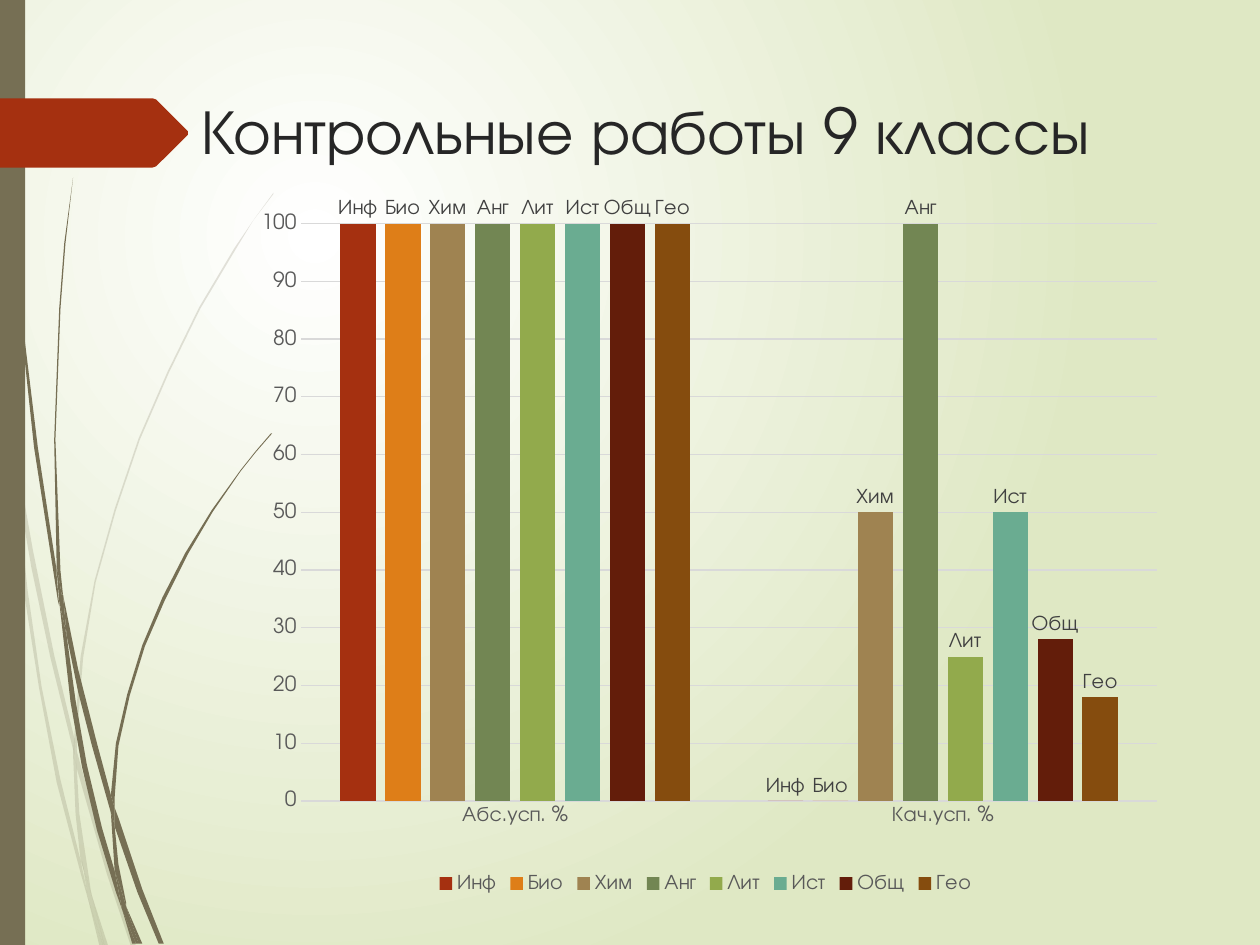
from pptx import Presentation, util as u
from pptx.chart import data as cd
from pptx.dml import color as col
from pptx.enum import chart as ce, shapes, text
from pptx.oxml import ns, parse_xml

PX = 9144
FONT = "TeX Gyre Adventor"
HUES = {"bark": "766F54", "red": "A53010", "white": "FFFFFF", "lime": "DFE8C4",
        "title": "262626", "label": "404040", "axis": "595959", "grid": "D9D9D9"}

PALE = [
    [(8, 350), (6, 322), (0, 282), (0, 299), (7, 344)],
    [(40, 522), (59, 599), (59, 586), (43, 520), (26, 436), (10, 345), (12, 376), (25, 451)],
    [(64, 607), (61, 596), (61, 610), (85, 694), (104, 751), (108, 751), (88, 692)],
    [(83, 751), (86, 751), (73, 711)],
    [(64, 683), (48, 619), (33, 545), (22, 469), (12, 376), (8, 350), (19, 470), (31, 546),
     (45, 621), (64, 693), (70, 714), (69, 707)],
    [(58, 599), (60, 646), (64, 683), (67, 692), (73, 711), (72, 706), (63, 646), (61, 610),
     (61, 608)],
    [(61, 584), (66, 522), (76, 462), (92, 405), (111, 349), (134, 296), (159, 245), (187, 198),
     (201, 175), (217, 154), (217, 153), (201, 175), (186, 197), (158, 244), (133, 295),
     (110, 348), (91, 404), (75, 461), (64, 521), (59, 584), (59, 586), (61, 596)],
    [(70, 714), (79, 751), (82, 751)],
    [(61, 608), (61, 610), (61, 596), (59, 586), (58, 599)],
    [(67, 692), (65, 683), (69, 707), (70, 714), (82, 751), (83, 751), (73, 711)],
]
DARK = [
    [(5, 110), (14, 233), (27, 355), (46, 477), (47, 481), (45, 457), (45, 453), (30, 355),
     (15, 232), (6, 109), (4, 48), (3, 0), (2, 0), (3, 48)],
    [(73, 592), (88, 645), (88, 633), (88, 631), (77, 590), (62, 531), (50, 472), (53, 505),
     (62, 549)],
    [(94, 649), (91, 641), (91, 656), (109, 708), (126, 749), (130, 749), (113, 706)],
    [(91, 691), (81, 657), (69, 607), (60, 556), (53, 505), (47, 477), (56, 557), (65, 608),
     (77, 659), (92, 708), (97, 722), (96, 717)],
    [(50, 472), (48, 453), (44, 349), (48, 245), (52, 193), (58, 141), (51, 193), (47, 245),
     (43, 349), (45, 449), (49, 472)],
    [(110, 749), (113, 749), (100, 719)],
    [(47, 477), (53, 505), (50, 472), (49, 472), (45, 449), (45, 453)],
    [(91, 633), (94, 592), (103, 552), (115, 513), (131, 476), (149, 440), (169, 406), (191, 374),
     (203, 359), (216, 344), (215, 344), (203, 358), (191, 373), (168, 405), (147, 439),
     (129, 474), (113, 512), (101, 551), (92, 590), (88, 631), (91, 641)],
    [(97, 722), (105, 749), (108, 749)],
    [(88, 645), (91, 691), (96, 706), (100, 719), (100, 716), (94, 686), (91, 656), (90, 651)],
    [(88, 645), (90, 651), (91, 656), (91, 641), (88, 631), (88, 633)],
    [(96, 706), (91, 691), (96, 717), (97, 722), (108, 749), (110, 749), (100, 719)],
]
ARROW = [(149, 107), (124, 132), (121, 133), (0, 133), (0, 78), (121, 78), (124, 79), (149, 104)]

CATS = ("Абс.усп. %", "Кач.усп. %")
MARKS = [("Инф", 0, "A53010"), ("Био", 0, "DE7E18"), ("Хим", 50, "9F8351"),
         ("Анг", 100, "728653"), ("Лит", 25, "92AA4C"), ("Ист", 50, "6AAC91"),
         ("Общ", 28, "631D0A"), ("Гео", 18, "854C0E")]


def rgb(hue):
    return col.RGBColor.from_string(HUES.get(hue, hue))


def px(*nums):
    return [u.Emu(n * PX) for n in nums]


def xml(tag, body):
    return parse_xml(f"<{tag} {ns.nsdecls('a', 'c')}>{body}</{tag}>")


class Deck:
    """Holds the style and the current slide."""

    def __init__(self, wide, high):
        self.prs = Presentation()
        self.prs.slide_width, self.prs.slide_height = px(wide, high)
        self.slide = self.prs.slides.add_slide(self.prs.slide_layouts[6])

    def glow(self, inner, outer):
        fill = self.slide.background.fill
        fill.gradient()
        for stop, hue in zip(fill.gradient_stops, (inner, outer)):
            stop.color.rgb = rgb(hue)
        grad = self.slide.element.find(".//" + ns.qn("a:gradFill"))
        lin = grad.find(ns.qn("a:lin"))
        mid = xml("a:path", '<a:fillToRect l="50000" t="50000" r="100000" b="100000"/>')
        mid.set("path", "circle")
        grad.replace(lin, mid)

    def paint(self, shape, hue, alpha=100):
        shape.shadow.inherit = False
        shape.fill.solid()
        shape.fill.fore_color.rgb = rgb(hue)
        shape.line.fill.background()
        if alpha < 100:
            tint = xml("a:alpha", "")
            tint.set("val", str(alpha * 1000))
            shape.element.spPr.find(".//" + ns.qn("a:srgbClr")).append(tint)

    def form(self, points, hue, alpha=100, group=None):
        home = group.shapes if group else self.slide.shapes
        pen = home.build_freeform(*points[0], scale=PX)
        pen.add_line_segments(points[1:], close=True)
        self.paint(pen.convert_to_shape(), hue, alpha)

    def grass(self, blades, hue, alpha=100):
        group = self.slide.shapes.add_group_shape()
        for blade in blades:
            self.form(blade, hue, alpha, group)

    def rect(self, box, hue):
        kind = shapes.MSO_SHAPE.RECTANGLE
        self.paint(self.slide.shapes.add_shape(kind, *px(*box)), hue)

    def font(self, font, size, hue):
        font.name, font.size = FONT, u.Pt(size)
        font.color.rgb = rgb(hue)

    def text(self, words, box, size=12, hue="title"):
        frame = self.slide.shapes.add_textbox(*px(*box)).text_frame
        frame.word_wrap = True
        frame.vertical_anchor = text.MSO_ANCHOR.TOP
        run = frame.paragraphs[0].add_run()
        run.text = words
        self.font(run.font, size, hue)

    def chart(self, box, cats, marks, area):
        data = cd.CategoryChartData()
        data.categories = cats
        for name, mark, _ in marks:
            data.add_series(name, (100, mark))
        kind = ce.XL_CHART_TYPE.COLUMN_CLUSTERED
        chart = self.slide.shapes.add_chart(kind, *px(*box), data).chart
        chart.has_title = False
        chart.element.find(ns.qn("c:chart")).addnext(
            xml("c:spPr", "<a:noFill/><a:ln><a:noFill/></a:ln>"))
        chart.has_legend = True
        chart.legend.position = ce.XL_LEGEND_POSITION.BOTTOM
        chart.legend.include_in_layout = False
        self.font(chart.legend.font, 12, "axis")
        self.axes(chart)
        self.bars(chart.plots[0], marks)
        self.place(chart, area)

    def axes(self, chart):
        cat, val = chart.category_axis, chart.value_axis
        for axis in (cat, val):
            axis.major_tick_mark = axis.minor_tick_mark = ce.XL_TICK_MARK.NONE
            self.font(axis.tick_labels.font, 12, "axis")
        val.minimum_scale, val.maximum_scale, val.major_unit = 0, 100, 10
        val.format.line.fill.background()
        for line in (cat.format.line, val.major_gridlines.format.line):
            line.color.rgb, line.width = rgb("grid"), u.Pt(0.75)

    def bars(self, plot, marks):
        plot.gap_width, plot.overlap = 219, -27
        plot.vary_by_categories = False
        for bar, (_, _, hue) in zip(plot.series, marks):
            bar.format.fill.solid()
            bar.format.fill.fore_color.rgb = rgb(hue)
            tags = bar.data_labels
            tags.show_series_name, tags.show_value = True, False
            tags.position = ce.XL_LABEL_POSITION.OUTSIDE_END
            self.font(tags.font, 12, "label")

    def place(self, chart, area):
        plot = chart.element.find(".//" + ns.qn("c:plotArea"))
        old = plot.find(ns.qn("c:layout"))
        if old is not None:
            plot.remove(old)
        modes = '<c:layoutTarget val="inner"/><c:xMode val="edge"/><c:yMode val="edge"/>'
        sizes = "".join(f'<c:{k} val="{v}"/>' for k, v in zip("xywh", area))
        plot.insert(0, xml("c:layout", f"<c:manualLayout>{modes}{sizes}</c:manualLayout>"))


def main():
    deck = Deck(1000, 750)
    deck.glow("white", "lime")
    deck.grass(PALE, "bark", alpha=20)
    deck.grass(DARK, "bark")
    deck.rect((0, 0, 20, 750), "bark")
    deck.form(ARROW, "red")
    deck.text("Контрольные работы 9 классы", (150, 68, 801, 140), size=36)
    deck.chart((187, 158, 746, 555), CATS, MARKS, (0.07, 0.03, 0.91, 0.83))
    deck.prs.save("out.pptx")


if __name__ == "__main__":
    main()
